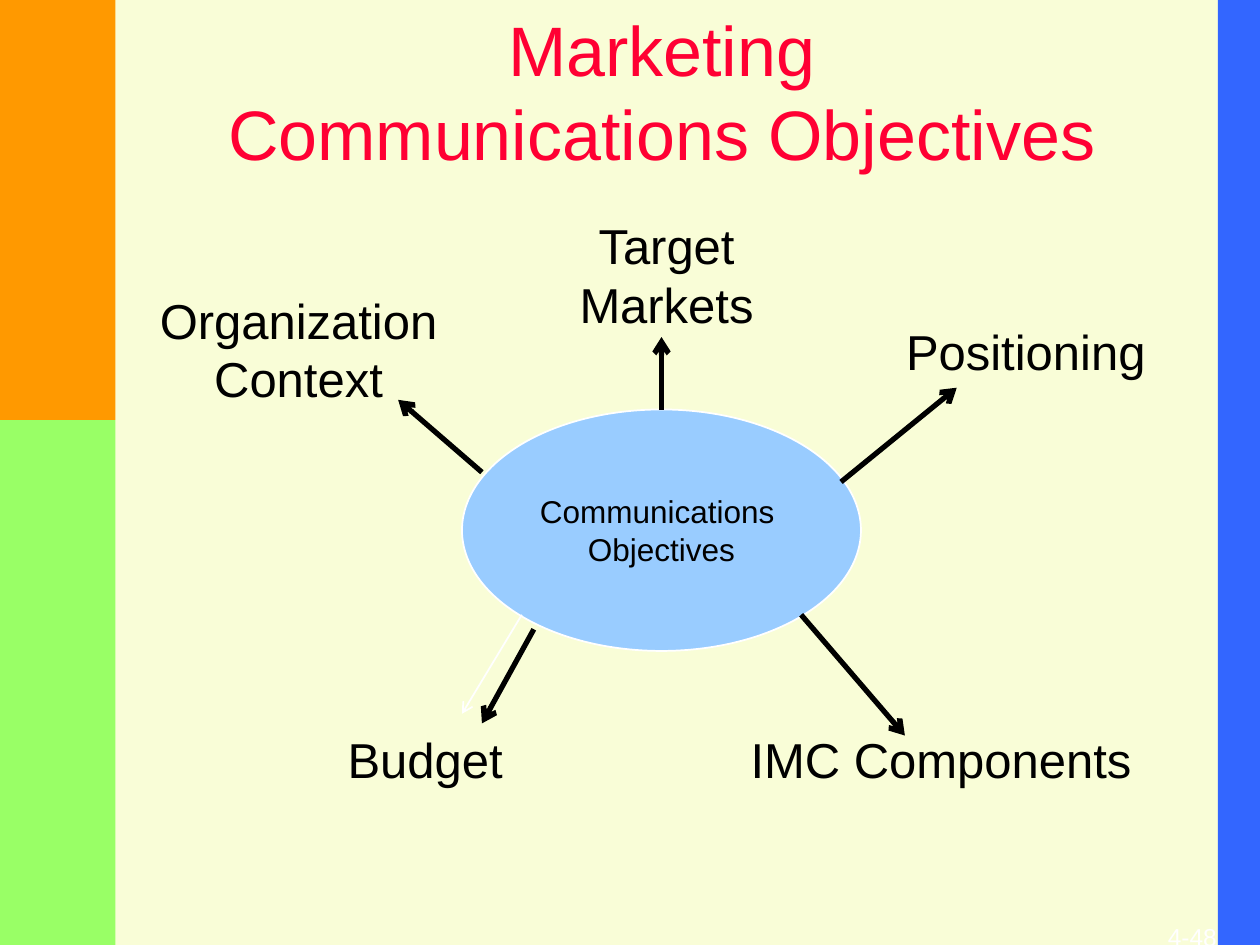
from dataclasses import dataclass

from lxml.etree import SubElement
from pptx import Presentation
from pptx.dml.color import RGBColor as RGB
from pptx.enum.shapes import MSO_CONNECTOR as CONNECTOR, MSO_SHAPE as SHAPE
from pptx.enum.text import MSO_ANCHOR as ANCHOR, MSO_AUTO_SIZE as AUTO, PP_ALIGN as ALIGN
from pptx.oxml.ns import qn
from pptx.util import Inches, Pt


@dataclass(frozen=True)
class Theme:
    font: str = "Arial"
    background: str = "F9FDD7"
    title: str = "FF0033"
    ink: str = "000000"
    white: str = "FFFFFF"
    blue: str = "3366FF"
    orange: str = "FF9900"
    green: str = "99FF66"
    hub: str = "99CCFF"
    title_size: int = 40
    label_size: int = 28
    hub_size: int = 18
    number_size: int = 14


T = Theme()
COLUMNS, ROWS = 120, 90


def grid(*units):
    return [Inches(u / 12) for u in units]


def write(sp, lines, size, color, align=ALIGN.CENTER, anchor=ANCHOR.TOP, wrap=True):
    tf = sp.text_frame
    tf.text = "\n".join(lines)
    tf.word_wrap = wrap
    tf.vertical_anchor = anchor
    for p in tf.paragraphs:
        p.alignment = align
        p.font.name = T.font
        p.font.size = Pt(size)
        p.font.color.rgb = RGB.from_string(color)


def add_filled(s, kind, box, color):
    sp = s.shapes.add_shape(kind, *grid(*box))
    sp.shadow.inherit = False
    sp.fill.solid()
    sp.fill.fore_color.rgb = RGB.from_string(color)
    sp.line.fill.background()
    return sp


def add_title(s, box, lines):
    sp = s.shapes.title
    sp.left, sp.top, sp.width, sp.height = grid(*box)
    write(sp, lines, T.title_size, T.title)
    sp.text_frame.auto_size = AUTO.SHAPE_TO_FIT_TEXT


def add_side_bands(s, left_width, right_width, split):
    add_filled(s, SHAPE.RECTANGLE, (COLUMNS - right_width, 0, right_width, ROWS), T.blue)
    add_filled(s, SHAPE.RECTANGLE, (0, 0, left_width, split), T.orange)
    add_filled(s, SHAPE.RECTANGLE, (0, split, left_width, ROWS - split), T.green)


def add_label(s, box, lines, wrap=False):
    sp = s.shapes.add_textbox(*grid(*box))
    write(sp, lines, T.label_size, T.ink, wrap=wrap)
    sp.text_frame.auto_size = AUTO.SHAPE_TO_FIT_TEXT


def add_arrow(s, start, end, color=T.ink, width=3):
    c = s.shapes.add_connector(CONNECTOR.STRAIGHT, *grid(*start, *end))
    c.line.color.rgb = RGB.from_string(color)
    c.line.width = Pt(width)
    SubElement(c.line._get_or_add_ln(), qn("a:tailEnd"), type="arrow")
    SubElement(c._element.spPr, qn("a:effectLst"))


def add_hub_diagram(s, box):
    x, y, w, h = box

    def at(dx, dy):
        return x + dx * w, y + dy * h

    hub = add_filled(s, SHAPE.OVAL, box, T.hub)
    hub.line.color.rgb = RGB.from_string(T.white)
    hub.line.width = Pt(1)
    write(hub, ["Communications ", "Objectives"], T.hub_size, T.ink, anchor=ANCHOR.MIDDLE)

    labels = [
        ((-0.79, -0.52), (28.9, 12.4), ["Organization", "Context"], False),
        ((0.26, -0.83), (19.2, 12.4), ["Target", "Markets"], True),
        ((1.08, -0.39), (25.3, 6.8), ["Positioning"], False),
        ((-0.32, 1.3), (17.3, 6.8), ["Budget"], False),
        ((0.69, 1.3), (38.8, 6.8), ["IMC Components"], False),
    ]
    for corner, size, lines, wrap in labels:
        add_label(s, (*at(*corner), *size), lines, wrap)

    add_arrow(s, at(0.15, 0.85), at(0, 1.26), T.white, 1)
    arrows = [
        ((0.05, 0.26), (-0.16, -0.04)),
        ((0.18, 0.91), (0.05, 1.3)),
        ((0.85, 0.85), (1.11, 1.35)),
        ((0.95, 0.3), (1.24, -0.09)),
        ((0.5, 0), (0.5, -0.3)),
    ]
    for start, end in arrows:
        add_arrow(s, at(*start), at(*end))


def add_page_number(s, box, number):
    sp = s.shapes.add_textbox(*grid(*box))
    write(sp, [number], T.number_size, T.white, ALIGN.RIGHT, ANCHOR.MIDDLE)
    tf = sp.text_frame
    tf.margin_left = tf.margin_right = tf.margin_top = tf.margin_bottom = 0


def main():
    prs = Presentation()
    prs.slide_width, prs.slide_height = grid(COLUMNS, ROWS)
    s = prs.slides.add_slide(prs.slide_layouts[5])
    s.background.fill.solid()
    s.background.fill.fore_color.rgb = RGB.from_string(T.background)
    add_title(s, (10, 0, 106, 17.2), ["Marketing", "Communications Objectives"])
    add_side_bands(s, 11, 4, 40)
    add_hub_diagram(s, (44, 39, 38, 23))
    add_page_number(s, (106, 87.8, 9.9, 2.8), "4-48")
    prs.save("out.pptx")


if __name__ == "__main__":
    main()
